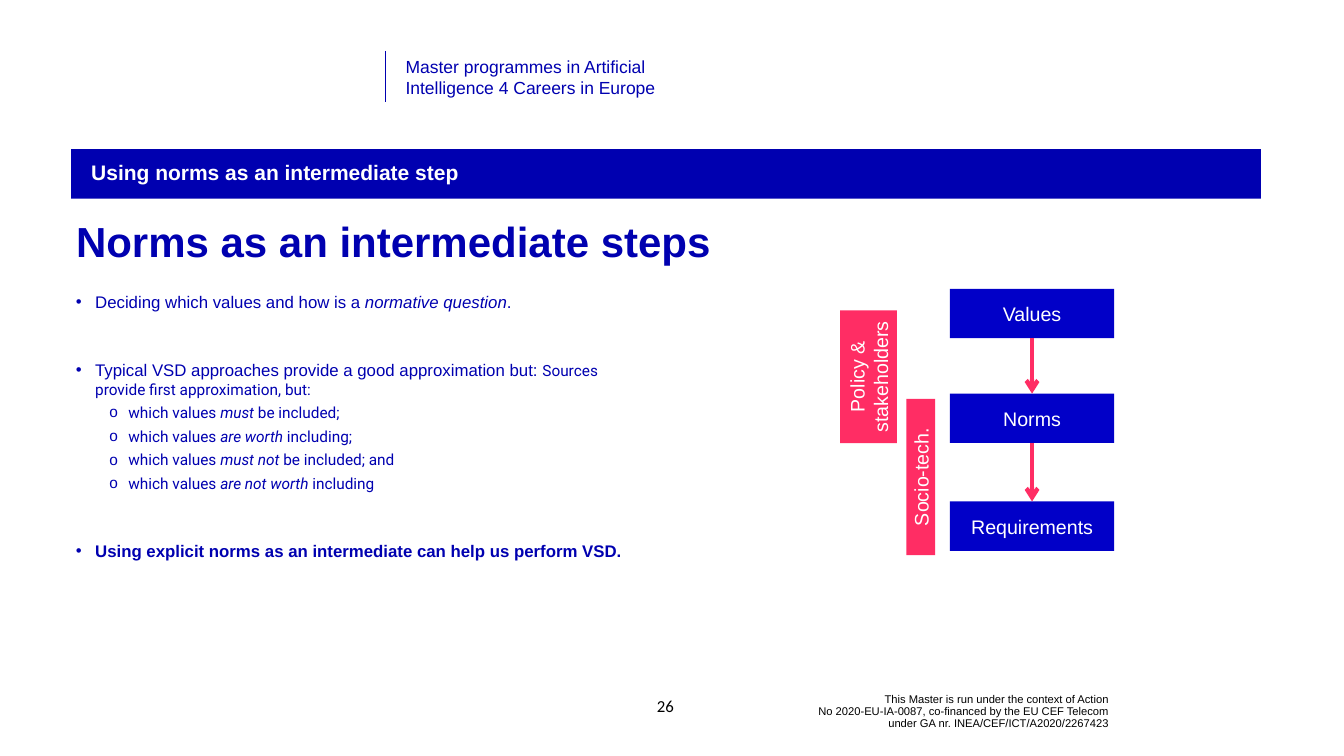
from dataclasses import dataclass

from lxml import etree
from pptx import Presentation
from pptx import util as u
from pptx.dml.color import RGBColor
from pptx.enum import shapes, text
from pptx.oxml.ns import qn


@dataclass(frozen=True)
class Theme:
    navy: str = "0000B0"
    blue: str = "0100C8"
    pink: str = "FF2D64"
    white: str = "FFFFFF"
    black: str = "000000"
    font: str = "Arial"
    detail_font: str = "Roboto"
    number_font: str = "Calibri"
    title: int = 60
    banner: int = 30
    label: int = 28
    header: int = 25
    body: int = 24
    detail: int = 22
    footer: int = 16


class SlideBuilder:
    def __init__(self, page, theme):
        self.page = page
        self.theme = theme

    def style(self, span, size, color, bold=False, italic=False, font=None):
        span.font.name = font or self.theme.font
        span.font.size = u.Pt(size)
        span.font.color.rgb = RGBColor.from_string(color)
        span.font.bold = bold
        span.font.italic = italic

    def fill_text(self, box, wording, size, color, align=text.PP_ALIGN.LEFT,
                  anchor=text.MSO_ANCHOR.TOP, bold=False, font=None, spacing=None):
        frame = box.text_frame
        frame.word_wrap = True
        frame.vertical_anchor = anchor
        para = frame.paragraphs[0]
        para.text = wording
        para.alignment = align
        para.line_spacing = spacing
        for span in para.runs:
            self.style(span, size, color, bold, font=font)

    def textbox(self, area, wording, size, color, **options):
        box = self.page.shapes.add_textbox(*map(u.Inches, area))
        self.fill_text(box, wording, size, color, **options)

    def block(self, area, fill, wording, size, rotation=0, inset=0.1, **options):
        box = self.page.shapes.add_shape(
            shapes.MSO_SHAPE.RECTANGLE, *map(u.Inches, area))
        box.shadow.inherit = False
        box.fill.solid()
        box.fill.fore_color.rgb = RGBColor.from_string(fill)
        box.line.fill.background()
        box.rotation = rotation
        box.text_frame.margin_left = u.Inches(inset)
        self.fill_text(box, wording, size, self.theme.white,
                       anchor=text.MSO_ANCHOR.MIDDLE, **options)
        return box

    def line(self, start, end, color, width):
        line = self.page.shapes.add_connector(
            shapes.MSO_CONNECTOR.STRAIGHT, *map(u.Inches, start + end))
        line.line.color.rgb = RGBColor.from_string(color)
        line.line.width = u.Pt(width)
        etree.SubElement(line._element.spPr, qn("a:effectLst"))
        return line

    def arrow(self, upper, lower, color, width):
        line = self.line((0, 0), (0, 0), color, width)
        line.begin_connect(upper, 2)
        line.end_connect(lower, 0)
        outline = line._element.spPr.find(qn("a:ln"))
        etree.SubElement(outline, qn("a:tailEnd"), type="arrow")

    def bullets(self, area, items):
        """Each item: bullet mark, left margin, space before, line spacing, spans."""
        frame = self.page.shapes.add_textbox(*map(u.Inches, area)).text_frame
        frame.word_wrap = True
        for index, (mark, margin, before, spacing, spans) in enumerate(items):
            para = frame.add_paragraph() if index else frame.paragraphs[0]
            para.space_before = u.Pt(before)
            para.line_spacing = spacing
            props = para._p.get_or_add_pPr()
            props.set("marL", str(u.Inches(margin)))
            props.set("indent", str(-u.Inches(0.38)))
            etree.SubElement(props, qn("a:buFont"), typeface=self.theme.font)
            etree.SubElement(props, qn("a:buChar"), char=mark)
            for wording, options in spans:
                span = para.add_run()
                span.text = wording
                self.style(span, color=self.theme.navy, **options)


def main():
    theme = Theme()
    deck = Presentation()
    deck.slide_width, deck.slide_height = u.Inches(26.67), u.Inches(15)
    page = deck.slides.add_slide(deck.slide_layouts[6])
    slide = SlideBuilder(page, theme)
    center, middle = text.PP_ALIGN.CENTER, text.MSO_ANCHOR.MIDDLE

    # Header and footer
    slide.textbox((15.02, 13.74, 7.08, 0.76),
                  "This Master is run under the context of Action\v"
                  "No 2020-EU-IA-0087, co-financed by the EU CEF Telecom\v"
                  "under GA nr. INEA/CEF/ICT/A2020/2267423",
                  theme.footer, theme.black, align=text.PP_ALIGN.RIGHT,
                  anchor=middle, spacing=0.9)
    slide.line((7.65, 1.01), (7.65, 2.03), theme.navy, 0.5)
    slide.textbox((7.95, 1.06, 6.37, 0.94),
                  "Master programmes in Artificial\vIntelligence 4 Careers in Europe",
                  theme.header, theme.navy)
    slide.textbox((12.65, 13.61, 1.11, 0.8), "26", theme.body, theme.black,
                  align=center, anchor=middle, font=theme.number_font)

    # Banner and title
    slide.block((1.41, 2.96, 23.61, 0.98), theme.navy,
                "Using norms as an intermediate step", theme.banner,
                inset=0.4, bold=True, spacing=0.9)
    slide.textbox((1.41, 4.26, 23.61, 1.24), "Norms as an intermediate steps",
                  theme.title, theme.navy, bold=True, spacing=u.Pt(70))

    # Bullet list
    main_text = {"size": theme.body}
    detail = {"size": theme.detail, "font": theme.detail_font}
    section_gap = 68
    options = [("must ", "be included;"), ("are worth ", "including;"),
               ("must not ", "be included; and"), ("are not worth ", "including")]
    items = [
        ("•", 0.38, 0, None, [
            ("Deciding which values and how is a ", main_text),
            ("normative question", {**main_text, "italic": True}),
            (".", main_text)]),
        ("•", 0.38, section_gap, None, [
            ("Typical VSD approaches provide a good approximation but: ", main_text),
            ("Sources provide first approximation, but:", detail)]),
    ]
    items += [("o", 1.04, 10, 0.9, [("which values ", detail),
                                    (verb, {**detail, "italic": True}),
                                    (ending, detail)])
              for verb, ending in options]
    items.append(("•", 0.38, section_gap, None, [
        ("Using explicit norms as an intermediate can help us perform VSD.",
         {**main_text, "bold": True})]))
    slide.bullets((1.41, 5.74, 11.37, 7.06), items)

    # Flow from values to requirements
    steps = [slide.block((18.85, top, 3.26, 0.98), theme.blue, name, theme.label,
                         align=center)
             for name, top in (("Values", 5.73), ("Norms", 7.81), ("Requirements", 9.95))]
    for upper, lower in zip(steps, steps[1:]):
        slide.arrow(upper, lower, theme.pink, 6)

    # Vertical labels beside the flow
    for name, area in (("Policy & stakeholders", (15.92, 6.91, 2.63, 1.13)),
                       ("Socio-tech.", (16.72, 9.18, 3.1, 0.57))):
        slide.block(area, theme.pink, name, theme.label, rotation=270, align=center)

    deck.save("out.pptx")


if __name__ == "__main__":
    main()
